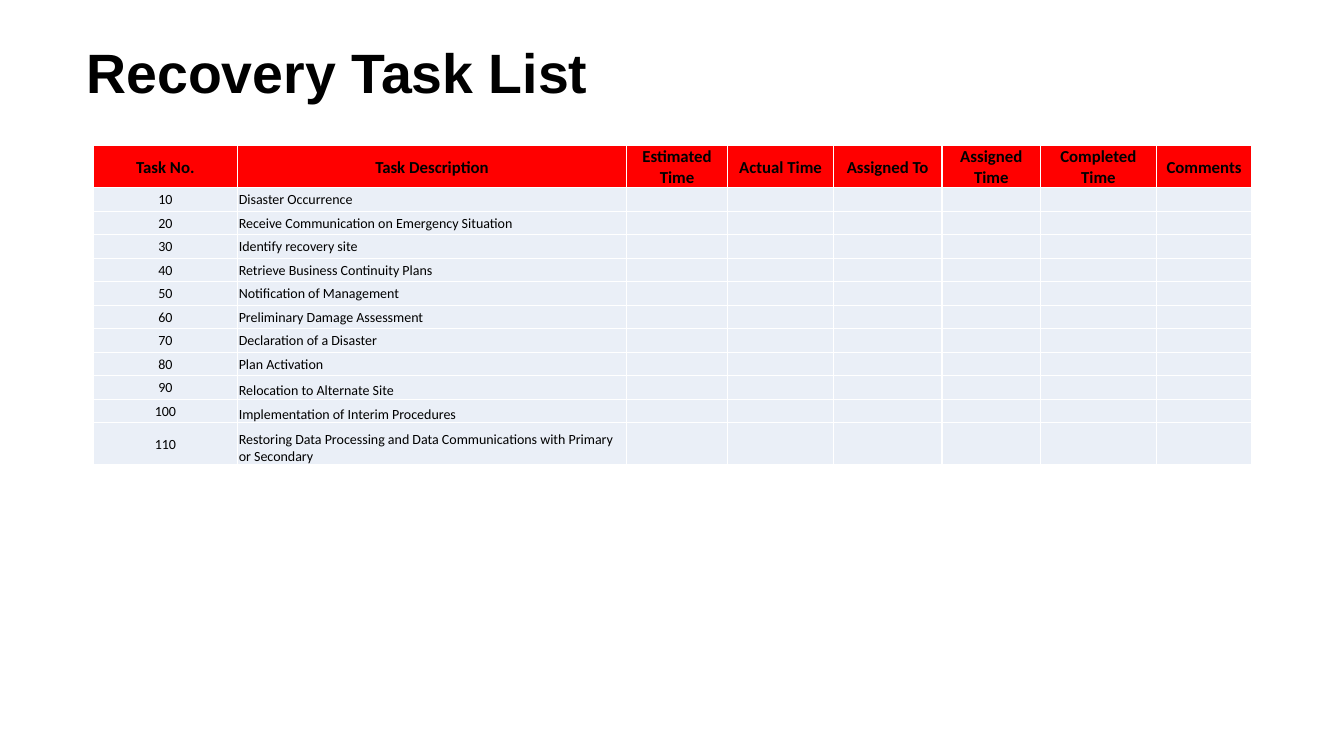
from dataclasses import dataclass

from lxml import etree
from pptx import Presentation
from pptx.dml.color import RGBColor
from pptx.enum import text
from pptx.oxml import ns
from pptx.util import Pt

BLACK, WHITE, RED, PALE_BLUE = "000000", "FFFFFF", "FF0000", "EAEFF7"
MIDDLE, BOTTOM = text.MSO_ANCHOR.MIDDLE, text.MSO_ANCHOR.BOTTOM
CENTER, LEFT = text.PP_ALIGN.CENTER, text.PP_ALIGN.LEFT


@dataclass
class Column:
    heading: str
    width: float


@dataclass
class Task:
    description: str
    anchor: text.MSO_ANCHOR = MIDDLE
    height: float = 16.8


@dataclass
class CellStyle:
    fill: str
    size: float
    bold: bool
    align: text.PP_ALIGN
    anchor: text.MSO_ANCHOR = MIDDLE


COLUMNS = [
    Column("Task No.", 103.5),
    Column("Task Description", 277.5),
    Column("Estimated Time", 72.5),
    Column("Actual Time", 75.5),
    Column("Assigned To", 77.5),
    Column("Assigned Time", 70.5),
    Column("Completed Time", 82.5),
    Column("Comments", 68.5),
]
TASKS = [
    Task("Disaster Occurrence"),
    Task("Receive Communication on Emergency Situation"),
    Task("Identify recovery site"),
    Task("Retrieve Business Continuity Plans"),
    Task("Notification of Management"),
    Task("Preliminary Damage Assessment"),
    Task("Declaration of a Disaster"),
    Task("Plan Activation"),
    Task("Relocation to Alternate Site", BOTTOM),
    Task("Implementation of Interim Procedures", BOTTOM),
    Task("Restoring Data Processing and Data Communications with Primary or Secondary",
         BOTTOM, 30),
]
HEADER_HEIGHT = 30


def color(value: str) -> RGBColor:
    return RGBColor.from_string(value)


def style_font(paragraph, name: str, size: float, bold: bool) -> None:
    font = paragraph.font
    font.name, font.size, font.bold = name, Pt(size), bold
    font.color.rgb = color(BLACK)


def add_borders(cell) -> None:
    properties = cell._tc.get_or_add_tcPr()
    for side in ("lnL", "lnR", "lnT", "lnB"):
        line = etree.SubElement(properties, ns.qn(f"a:{side}"), w=str(Pt(1)))
        fill = etree.SubElement(line, ns.qn("a:solidFill"))
        etree.SubElement(fill, ns.qn("a:srgbClr"), val=WHITE)


def fill_cell(cell, wording: str, style: CellStyle) -> None:
    add_borders(cell)
    cell.fill.solid()
    cell.fill.fore_color.rgb = color(style.fill)
    cell.margin_left = cell.margin_right = cell.margin_top = Pt(0.7)
    cell.margin_bottom = Pt(0)
    cell.vertical_anchor = style.anchor
    paragraph = cell.text_frame.paragraphs[0]
    paragraph.alignment = style.align
    style_font(paragraph, "Calibri", style.size, style.bold)
    if wording:
        paragraph.add_run().text = wording
    else:
        # Keeps an empty cell from stretching its row
        etree.SubElement(paragraph._p, ns.qn("a:endParaRPr"), sz=str(int(style.size * 100)))


def add_title(slide, wording: str) -> None:
    frame = slide.shapes.add_textbox(Pt(54.7), Pt(28.8), Pt(828), Pt(50.4)).text_frame
    frame.word_wrap = True
    frame.vertical_anchor = MIDDLE
    paragraph = frame.paragraphs[0]
    paragraph.text = wording
    paragraph.line_spacing = 0.9
    style_font(paragraph, "Arial", 39.6, True)


def add_task_table(slide) -> None:
    heights = [HEADER_HEIGHT] + [task.height for task in TASKS]
    table = slide.shapes.add_table(
        len(heights), len(COLUMNS), Pt(66.4), Pt(104.2),
        Pt(sum(column.width for column in COLUMNS)), Pt(sum(heights))).table
    table.horz_banding = False
    for row, height in zip(table.rows, heights):
        row.height = Pt(height)

    # Header row
    heading_style = CellStyle(RED, 12, True, CENTER)
    for index, column in enumerate(COLUMNS):
        table.columns[index].width = Pt(column.width)
        fill_cell(table.cell(0, index), column.heading, heading_style)

    # One row per task, numbered in tens, with blank columns to fill in
    number_style = CellStyle(PALE_BLUE, 10, False, CENTER)
    for row, task in enumerate(TASKS, start=1):
        description_style = CellStyle(PALE_BLUE, 10, False, LEFT, task.anchor)
        fill_cell(table.cell(row, 0), str(row * 10), number_style)
        fill_cell(table.cell(row, 1), task.description, description_style)
        for blank in range(2, len(COLUMNS)):
            fill_cell(table.cell(row, blank), "", number_style)


def main() -> None:
    deck = Presentation()
    deck.slide_width, deck.slide_height = Pt(960), Pt(540)
    slide = deck.slides.add_slide(deck.slide_layouts[6])
    add_title(slide, "Recovery Task List")
    add_task_table(slide)
    deck.save("out.pptx")


if __name__ == "__main__":
    main()
